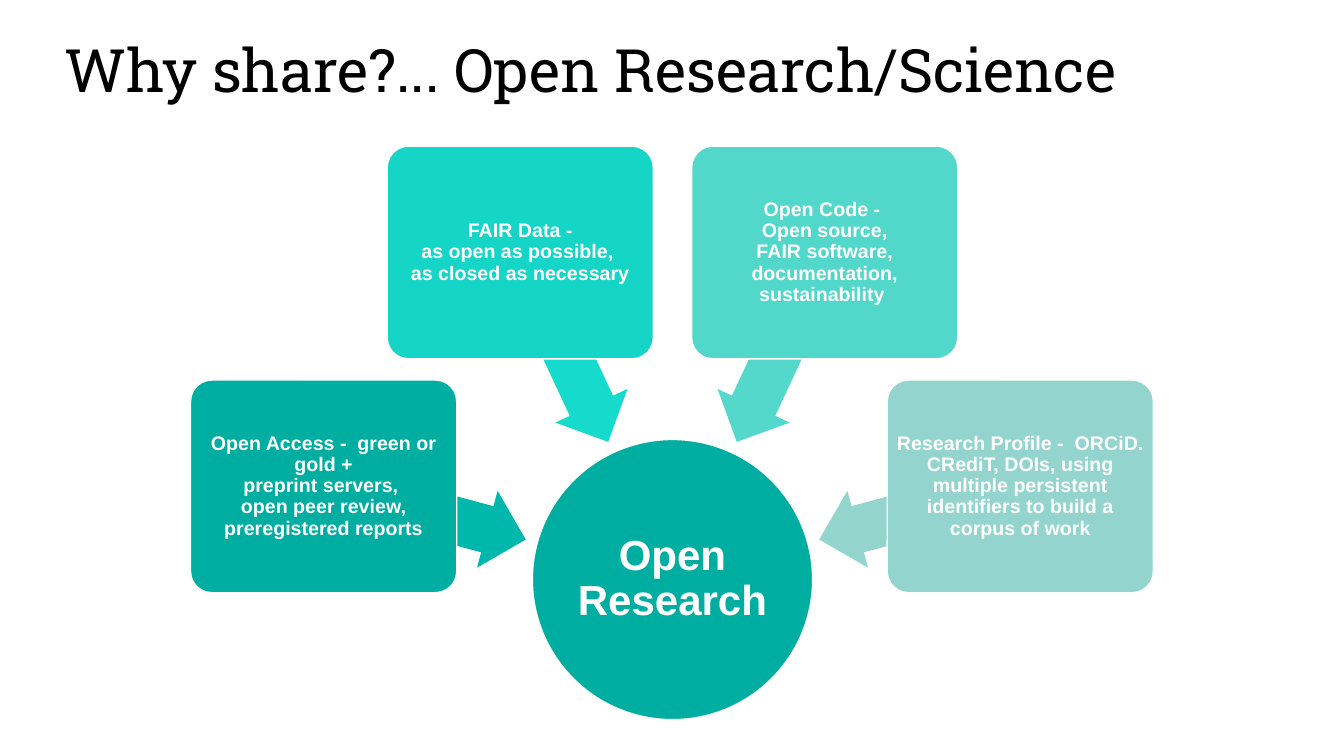
from copy import deepcopy
from pptx import Presentation
from pptx import util as u
from pptx.dml.color import RGBColor
from pptx.enum import shapes, text
from pptx.oxml.ns import qn

PX = 9144


def write(shape, content, font="Arial", size=14, color="FFFFFF", bold=True,
          align=text.PP_ALIGN.CENTER, margins=(3, 3)):
    frame = shape.text_frame
    frame.word_wrap = True
    frame.auto_size = text.MSO_AUTO_SIZE.NONE
    frame.vertical_anchor = text.MSO_ANCHOR.MIDDLE
    frame.margin_left = frame.margin_right = margins[0] * PX
    frame.margin_top = frame.margin_bottom = margins[1] * PX
    paragraph = frame.paragraphs[0]
    paragraph.text = content
    paragraph.alignment = align
    paragraph.line_spacing = 0.9
    paragraph.space_before = u.Pt(0)
    for run in paragraph.runs:
        run.font.name = font
        run.font.size = u.Pt(size)
        run.font.bold = bold
        run.font.color.rgb = RGBColor.from_string(color)
    for line_break in paragraph._p.findall(qn("a:br")):
        line_break.append(deepcopy(paragraph.runs[0]._r.rPr))


def draw(kind, left, top, width, height, fill, outlined=True):
    shape = slide.shapes.add_shape(kind, left * PX, top * PX, width * PX, height * PX)
    shape.shadow.inherit = False
    shape.fill.solid()
    shape.fill.fore_color.rgb = RGBColor.from_string(fill)
    if outlined:
        shape.line.color.rgb = RGBColor.from_string("FFFFFF")
        shape.line.width = u.Pt(1)
    else:
        shape.line.fill.background()
    return shape


presentation = Presentation()
presentation.slide_width = 1333 * PX
presentation.slide_height = 750 * PX
slide = presentation.slides.add_slide(presentation.slide_layouts[5])

title = slide.shapes.title
title.left, title.top, title.width, title.height = 54 * PX, 0, 1225 * PX, 145 * PX
write(title, "Why share?... Open Research/Science", font="Roboto Slab", size=42.7,
      color="000000", bold=False, align=text.PP_ALIGN.LEFT, margins=(10, 5))

hub = draw(shapes.MSO_SHAPE.OVAL, 528, 436, 278, 278, "00ADA1")
write(hub, "Open Research", size=30, margins=(2, 2))

topics = [
    (189, 377, "00ADA1", 318, 469, "00B7AC",
     "Open Access -  green or gold +\npreprint servers, \nopen peer review, preregistered reports"),
    (384, 145, "15D5C7", 456, 305, "16DBCC",
     "FAIR Data -\nas open as possible, \nas closed as necessary"),
    (686, 145, "52D7CB", 671, 305, "55D8CC",
     "Open Code - \nOpen source,\nFAIR software, documentation, sustainability "),
    (880, 377, "93D5CE", 809, 469, "93D5CD",
     "Research Profile -  ORCiD. CRediT, DOIs, using multiple persistent identifiers "
     "to build a corpus of work"),
]
for index, (left, top, fill, arrow_left, arrow_top, arrow_fill, content) in enumerate(topics):
    arrow = draw(shapes.MSO_SHAPE.LEFT_ARROW, arrow_left, arrow_top, 207, 79,
                 arrow_fill, outlined=False)
    arrow.adjustments[0] = 0.6
    arrow.adjustments[1] = 0.5
    arrow.rotation = 195 + 50 * index
    card = draw(shapes.MSO_SHAPE.ROUNDED_RECTANGLE, left, top, 264, 211, fill)
    card.adjustments[0] = 0.1
    write(card, content)

presentation.save("out.pptx")
